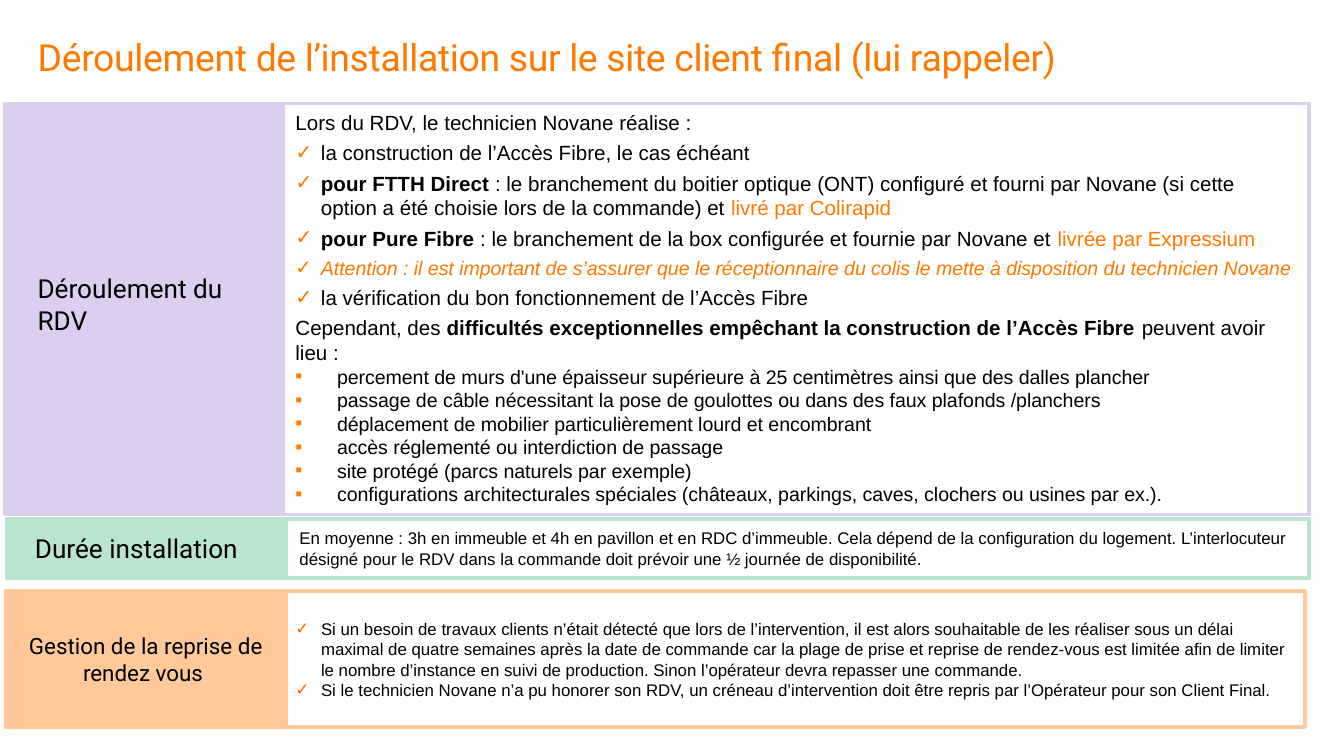
import pptx
import pptx.util
import pptx.dml.color
import pptx.enum.shapes
import pptx.enum.text
import pptx.oxml.ns
from lxml import etree

COLORS = {"accent": "FF7900", "check": "FF6600", "text": "000000",
          "visit": "DCCEEF", "duration": "B9E5CF", "rebooking": "FFC999"}
TOP = pptx.enum.text.MSO_ANCHOR.TOP
MIDDLE = pptx.enum.text.MSO_ANCHOR.MIDDLE
LEFT = pptx.enum.text.PP_ALIGN.LEFT
CENTER = pptx.enum.text.PP_ALIGN.CENTER
CHECK, SQUARE = ("✓", 0.19), ("▪", 0.31)  # character, hanging indent


def rgb(name):
    return pptx.dml.color.RGBColor.from_string(COLORS[name])


def to_lengths(box):
    return [pptx.util.Inches(length) for length in box]


def set_bullet(paragraph, bullet, color):
    character, indent = bullet
    properties = paragraph._p.get_or_add_pPr()
    properties.set("marL", str(pptx.util.Inches(indent)))
    properties.set("indent", str(-pptx.util.Inches(indent)))
    tag = pptx.oxml.ns.qn
    bullet_color = etree.SubElement(properties, tag("a:buClr"))
    etree.SubElement(bullet_color, tag("a:srgbClr"), val=COLORS[color])
    etree.SubElement(properties, tag("a:buFont"), typeface="Arial")
    etree.SubElement(properties, tag("a:buChar"), char=character)


def write(frame, paragraphs, size, face="Arial", align=LEFT, bullet_color="accent"):
    """Each paragraph is a dict: runs, and optionally bullet, before, size, color, italic.
    A run is a string, or a pair of string and "bold" or a colour name."""
    frame.word_wrap = True
    for index, content in enumerate(paragraphs):
        paragraph = frame.add_paragraph() if index else frame.paragraphs[0]
        paragraph.alignment = align
        paragraph.space_before = pptx.util.Pt(content.get("before", 0))
        paragraph.font.name = face
        paragraph.font.size = pptx.util.Pt(content.get("size", size))
        paragraph.font.color.rgb = rgb(content.get("color", "text"))
        if content.get("italic"):
            paragraph.font.italic = True
        if "bullet" in content:
            set_bullet(paragraph, content["bullet"], bullet_color)
        for part in content["runs"]:
            words, style = part if isinstance(part, tuple) else (part, None)
            run = paragraph.add_run()
            run.text = words
            if style == "bold":
                run.font.bold = True
            elif style:
                run.font.color.rgb = rgb(style)


def add_panel(slide, box, color, filled):
    panel = slide.shapes.add_shape(pptx.enum.shapes.MSO_SHAPE.RECTANGLE, *to_lengths(box))
    panel.shadow.inherit = False
    if filled:
        panel.fill.solid()
        panel.fill.fore_color.rgb = rgb(color)
    else:
        panel.fill.background()
    panel.line.color.rgb = rgb(color)
    panel.line.width = pptx.util.Pt(2)
    panel.text_frame.vertical_anchor = MIDDLE
    return panel.text_frame


def clear_margins(frame):
    frame.margin_left = frame.margin_right = frame.margin_top = frame.margin_bottom = 0


def add_label(slide, box, label):
    frame = slide.shapes.add_textbox(*to_lengths(box)).text_frame
    clear_margins(frame)
    write(frame, [{"runs": [label]}], 14, "Roboto")


def add_title(slide, box, words):
    title = slide.shapes.title
    title.left, title.top, title.width, title.height = to_lengths(box)
    frame = title.text_frame
    clear_margins(frame)
    frame.vertical_anchor = TOP
    write(frame, [{"runs": [words], "color": "accent"}], 20, "Roboto")
    frame.paragraphs[0].line_spacing = 0.9
    frame.paragraphs[0].runs[0]._r.get_or_add_rPr().set("spc", "-20")


def add_visit(slide, left, top, height):
    def step(*runs, **style):
        return {"runs": runs, "bullet": CHECK, "before": 3, **style}

    difficulties = [
        "percement de murs d'une épaisseur supérieure à 25 centimètres ainsi que des dalles plancher",
        "passage de câble nécessitant la pose de goulottes ou dans des faux plafonds /planchers",
        "déplacement de mobilier particulièrement lourd et encombrant",
        "accès réglementé ou interdiction de passage",
        "site protégé (parcs naturels par exemple)",
        "configurations architecturales spéciales (châteaux, parkings, caves, clochers ou usines par ex.).",
    ]
    paragraphs = [
        {"runs": ["Lors du RDV, le technicien Novane réalise :"]},
        step("la construction de l’Accès Fibre, le cas échéant "),
        step(("pour FTTH Direct ", "bold"),
             ": le branchement du boitier optique (ONT) configuré et fourni par Novane "
             "(si cette option a été choisie lors de la commande) et ",
             ("livré par Colirapid", "accent")),
        step(("pour Pure Fibre ", "bold"),
             ": le branchement de la box configurée et fournie par Novane et ",
             ("livrée par Expressium", "accent")),
        step("Attention : il est important de s’assurer que le réceptionnaire du colis "
             "le mette à disposition du technicien Novane",
             size=10.5, color="accent", italic=True),
        step("la vérification du bon fonctionnement de l’Accès Fibre"),
        {"runs": ["Cependant, des ",
                  ("difficultés exceptionnelles empêchant la construction de l’Accès Fibre ", "bold"),
                  "peuvent avoir lieu :"], "before": 3},
    ] + [{"runs": [words], "bullet": SQUARE, "size": 10.5} for words in difficulties]
    add_panel(slide, (left, top, 2.07, height), "visit", True)
    add_label(slide, (left + 0.24, top + 1.26, 1.73, 0.47), "Déroulement du RDV")
    details_box = (left + 2.06, top, 7.64, height)
    add_panel(slide, details_box, "visit", False)
    details = slide.shapes.add_textbox(*to_lengths(details_box))
    write(details.text_frame, paragraphs, 11)


def add_duration(slide, left, top, height):
    add_panel(slide, (left, top, 2.07, height), "duration", True)
    details = add_panel(slide, (left + 2.08, top, 7.61, height), "duration", False)
    write(details, [{"runs": [
        "En moyenne : 3h en immeuble et 4h en pavillon et en RDC d’immeuble. Cela dépend de la "
        "configuration du logement. L’interlocuteur désigné pour le RDV dans la commande doit "
        "prévoir une ½ journée de disponibilité."]}], 9)
    add_label(slide, (left + 0.21, top + 0.1, 1.73, 0.24), "Durée installation")


def add_rebooking(slide, left, top, height):
    rules = [
        "Si un besoin de travaux clients n’était détecté que lors de l’intervention, il est alors "
        "souhaitable de les réaliser sous un délai maximal de quatre semaines après la date de "
        "commande car la plage de prise et reprise de rendez-vous est limitée afin de limiter le "
        "nombre d’instance en suivi de production. Sinon l’opérateur devra repasser une commande.",
        "Si le technicien Novane n’a pu honorer son RDV, un créneau d’intervention doit être "
        "repris par l’Opérateur pour son Client Final.",
    ]
    details = add_panel(slide, (left + 2.06, top, 7.61, height), "rebooking", False)
    write(details, [{"runs": [rule], "bullet": CHECK} for rule in rules], 9, bullet_color="check")
    label = add_panel(slide, (left, top, 2.09, height), "rebooking", True)
    write(label, [{"runs": ["Gestion de la reprise de rendez vous "]}], 12, "Roboto", CENTER)


def main():
    deck = pptx.Presentation()
    # Widescreen, 16:9
    deck.slide_width = pptx.util.Inches(10)
    deck.slide_height = deck.slide_width * 9 // 16
    slide = deck.slides.add_slide(deck.slide_layouts[5])
    add_title(slide, (0.28, 0.29, 9.38, 0.81),
              "Déroulement de l’installation sur le site client final (lui rappeler)")
    # Rows from top to bottom
    add_visit(slide, 0.04, 0.77, 3.06)
    add_duration(slide, 0.05, 3.86, 0.44)
    add_rebooking(slide, 0.04, 4.4, 1.01)
    deck.save("out.pptx")


if __name__ == "__main__":
    main()
